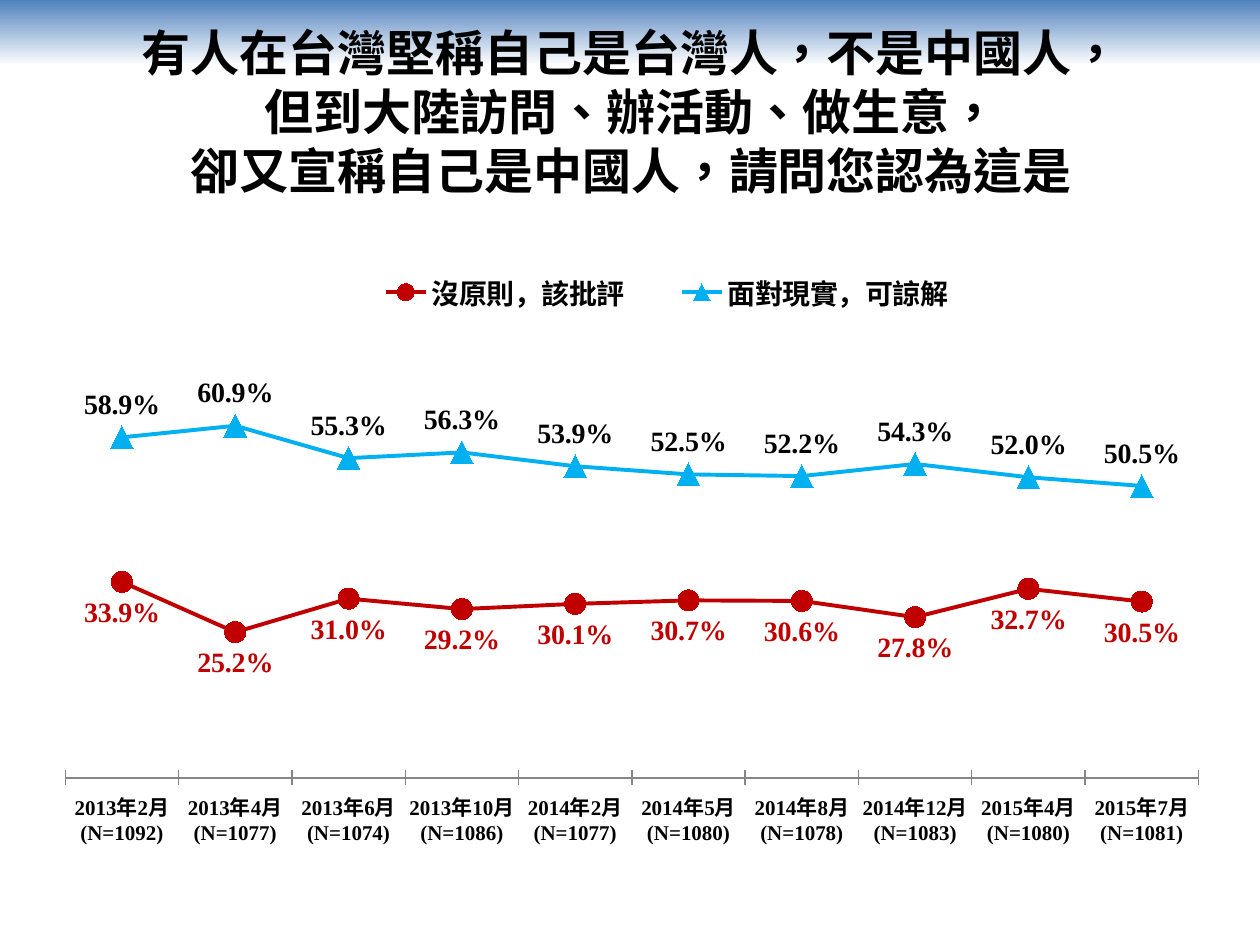
from lxml import etree
from pptx import Presentation
from pptx.chart.data import CategoryChartData
from pptx.dml.color import RGBColor
from pptx.enum import chart as ch, shapes, text
from pptx.oxml import parse_xml
from pptx.oxml.ns import nsdecls, qn
from pptx.util import Inches, Pt

COLORS = {"blue": "4F81BD", "white": "FFFFFF", "black": "000000",
          "red": "C00000", "sky": "00B0F0", "axis": "868686"}
QUESTION = ["有人在台灣堅稱自己是台灣人，不是中國人，",
            "但到大陸訪問、辦活動、做生意，",
            "卻又宣稱自己是中國人，請問您認為這是"]
SURVEYS = [("2013年2月", 1092), ("2013年4月", 1077), ("2013年6月", 1074),
           ("2013年10月", 1086), ("2014年2月", 1077), ("2014年5月", 1080),
           ("2014年8月", 1078), ("2014年12月", 1083), ("2015年4月", 1080),
           ("2015年7月", 1081)]
ANSWERS = [
    {"name": "沒原則，該批評", "color": "red", "label": "red",
     "marker": ch.XL_MARKER_STYLE.CIRCLE, "size": 12,
     "position": ch.XL_LABEL_POSITION.BELOW,
     "shares": [0.339, 0.252, 0.31, 0.292, 0.301, 0.307, 0.306, 0.278, 0.327, 0.305]},
    {"name": "面對現實，可諒解", "color": "sky", "label": "black",
     "marker": ch.XL_MARKER_STYLE.TRIANGLE, "size": 13,
     "position": ch.XL_LABEL_POSITION.ABOVE,
     "shares": [0.589, 0.609, 0.553, 0.563, 0.539, 0.525, 0.522, 0.543, 0.52, 0.505]},
]
PLOT_AREA = {"x": 0.018, "y": 0.202, "w": 0.964, "h": 0.635}
LEGEND_AREA = {"x": 0.25, "y": 0.04, "w": 0.56, "h": 0.07}


def rgb(key):
    return RGBColor.from_string(COLORS[key])


def style(font, size, face, color="black"):
    font.size, font.bold, font.name = Pt(size), True, face
    font.color.rgb = rgb(color)


def manual_layout(area, inner=False):
    layout = parse_xml(f"<c:layout {nsdecls('c')}><c:manualLayout/></c:layout>")
    settings = {"layoutTarget": "inner"} if inner else {}
    settings.update(xMode="edge", yMode="edge", **area)
    for tag, value in settings.items():
        etree.SubElement(layout[0], qn(f"c:{tag}")).set("val", str(value))
    return layout


def add_band(slide):
    band = slide.shapes.add_shape(shapes.MSO_SHAPE.RECTANGLE, 0, 0, Inches(10), Inches(0.52))
    band.shadow.inherit = False
    band.line.fill.background()
    band.fill.gradient()
    band.fill.gradient_angle = 270
    for stop, position, color in zip(band.fill.gradient_stops, (0, 1), ("blue", "white")):
        stop.position = position
        stop.color.rgb = rgb(color)
    slide.shapes._spTree.insert(2, band._element)


def add_question(slide):
    title = slide.shapes.title
    title.left, title.top, title.width, title.height = map(Inches, (0.51, 0.21, 9, 1.34))
    frame = title.text_frame
    frame.text = "\n".join(QUESTION)
    frame.auto_size = text.MSO_AUTO_SIZE.NONE
    frame.vertical_anchor = text.MSO_ANCHOR.MIDDLE
    for line in frame.paragraphs:
        line.alignment = text.PP_ALIGN.CENTER
        line.line_spacing = Pt(33.5)
        for run in line.runs:
            style(run.font, 28, "Noto Sans CJK SC")
            properties = run._r.get_or_add_rPr()
            properties.set("lang", "zh-TW")
            etree.SubElement(properties, qn("a:ea")).set("typeface", "Noto Sans CJK SC")


def add_trend(slide):
    data = CategoryChartData(number_format="0.0%")
    data.categories = [f"{month}\n(N={count})" for month, count in SURVEYS]
    for answer in ANSWERS:
        data.add_series(answer["name"], answer["shares"])
    trend = slide.shapes.add_chart(ch.XL_CHART_TYPE.LINE_MARKERS, Inches(0.35), Inches(1.94),
                                   Inches(9.33), Inches(5.06), data).chart
    trend.has_title = False
    trend.font.size, trend.font.name = Pt(18), "Arial"
    trend.font.color.rgb = rgb("black")

    trend.has_legend = True
    legend = trend.legend
    legend.position = ch.XL_LEGEND_POSITION.TOP
    legend.include_in_layout = False
    style(legend.font, 16, "Arial")
    legend_xml = legend._element
    for old in legend_xml.findall(qn("c:layout")):
        legend_xml.remove(old)
    legend_xml.find(qn("c:legendPos")).addnext(manual_layout(LEGEND_AREA))

    plot_xml = trend._chartSpace.chart.plotArea
    for old in plot_xml.findall(qn("c:layout")):
        plot_xml.remove(old)
    plot_xml.insert(0, manual_layout(PLOT_AREA, inner=True))

    months = trend.category_axis
    months.major_tick_mark = ch.XL_TICK_MARK.CROSS
    months.has_major_gridlines = False
    months.format.line.color.rgb = rgb("axis")
    style(months.tick_labels.font, 12, "Times New Roman")
    percent = trend.value_axis
    percent.minimum_scale, percent.maximum_scale = 0, 0.7
    percent.has_major_gridlines = False
    percent.visible = False

    for series, answer in zip(trend.plots[0].series, ANSWERS):
        series.smooth = False
        series.format.line.width = Pt(2.25)
        series.format.line.color.rgb = rgb(answer["color"])
        marker = series.marker
        marker.style, marker.size = answer["marker"], answer["size"]
        marker.format.fill.solid()
        marker.format.fill.fore_color.rgb = rgb(answer["color"])
        marker.format.line.color.rgb = rgb(answer["color"])
        labels = series.data_labels
        labels.show_value = True
        labels.position = answer["position"]
        labels.number_format = "0.0%"
        labels.number_format_is_linked = False
        style(labels.font, 16, "Times New Roman", answer["label"])


def main():
    deck = Presentation()
    deck.slide_width, deck.slide_height = Inches(10), Inches(7.5)
    slide = deck.slides.add_slide(deck.slide_layouts[5])
    add_band(slide)
    add_question(slide)
    add_trend(slide)
    deck.save("out.pptx")


if __name__ == "__main__":
    main()
